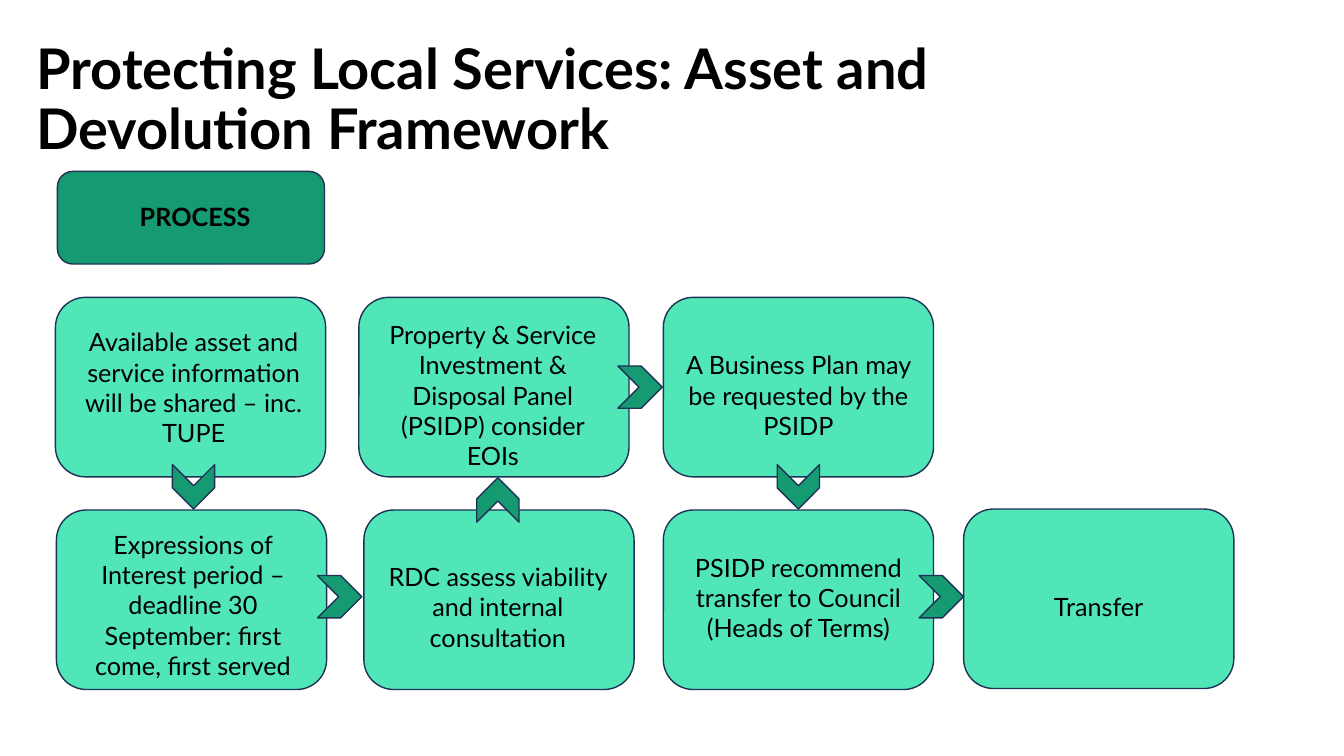
from dataclasses import dataclass

from pptx import Presentation
from pptx import util as u
from pptx.dml.color import RGBColor
from pptx.enum import shapes, text

COLOURS = {"mint": "50E6B8", "green": "169A71", "navy": "1E3256", "black": "000000"}
FONT = "Lato"
BOX_WIDTH, BOX_HEIGHT = 193, 128.2
CHEVRON_WIDTH, CHEVRON_HEIGHT = 31.7, 30.2
LINE_HEIGHT = 22


@dataclass
class Step:
    wording: str
    left: float
    top: float
    text_left: float
    text_top: float
    text_width: float
    lines: int


@dataclass
class Chevron:
    left: float
    top: float
    rotation: int = 0


STEPS = [
    Step("Available asset and service information will be shared – inc. TUPE",
         39.6, 212.4, 56.2, 232.6, 164.2, 4),
    Step("Expressions of Interest period – deadline 30 September: first come, first served",
         40.3, 364.3, 65.5, 377.3, 144.7, 5),
    Step("RDC assess viability and internal consultation",
         259.9, 364.3, 275, 400.3, 161.3, 3),
    Step("Property & Service Investment & Disposal Panel (PSIDP) consider EOIs",
         256.3, 212.4, 271.4, 227.5, 161.3, 5),
    Step("A Business Plan may be requested by the PSIDP",
         473.8, 212.4, 488.2, 249.1, 164.2, 3),
    Step("PSIDP recommend transfer to Council (Heads of Terms)",
         473.8, 364.3, 488.2, 393.8, 164.2, 3),
    Step("Transfer", 688.3, 363.6, 702.7, 421.9, 164.2, 1),
]

CHEVRONS = [
    Chevron(122.4, 332.6, 90),
    Chevron(226.8, 411.1),
    Chevron(339.8, 342, 270),
    Chevron(441.4, 261.4),
    Chevron(554.4, 332.6, 90),
    Chevron(656.6, 411.1),
]


def colour(name: str) -> RGBColor:
    return RGBColor.from_string(COLOURS[name])


def add_span(para, wording: str, size: float, bold: bool) -> None:
    span = para.add_run()
    span.text = wording
    span.font.name = FONT
    span.font.size = u.Pt(size)
    span.font.bold = bold
    span.font.color.rgb = colour("black")


def add_outline(page, kind, left: float, top: float, width: float, height: float,
                fill: str, rotation: int = 0) -> None:
    shape = page.shapes.add_shape(kind, u.Pt(left), u.Pt(top), u.Pt(width), u.Pt(height))
    shape.shadow.inherit = False
    shape.fill.solid()
    shape.fill.fore_color.rgb = colour(fill)
    shape.line.color.rgb = colour("navy")
    shape.line.width = u.Pt(1)
    shape.rotation = rotation


def add_label(page, wording: str, left: float, top: float, width: float, height: float,
              bold: bool = False, inset: bool = False) -> None:
    box = page.shapes.add_textbox(u.Pt(left), u.Pt(top), u.Pt(width), u.Pt(height))
    frame = box.text_frame
    frame.word_wrap = True
    frame.auto_size = text.MSO_AUTO_SIZE.SHAPE_TO_FIT_TEXT
    if not inset:
        frame.margin_left = frame.margin_right = frame.margin_bottom = 0
        frame.margin_top = u.Pt(0.7)
    para = frame.paragraphs[0]
    para.alignment = text.PP_ALIGN.CENTER
    add_span(para, wording, 18, bold)


def add_title(page, wording: str) -> None:
    title = page.shapes.title
    title.left, title.top = u.Pt(18.7), u.Pt(20.2)
    title.width, title.height = u.Pt(851.8), u.Pt(104.4)
    frame = title.text_frame
    frame.word_wrap = True
    frame.auto_size = text.MSO_AUTO_SIZE.NONE
    frame.vertical_anchor = text.MSO_ANCHOR.MIDDLE
    para = frame.paragraphs[0]
    para.alignment = text.PP_ALIGN.LEFT
    para.line_spacing = 0.9
    add_span(para, wording, 40, True)


def main() -> None:
    deck = Presentation()
    deck.slide_width, deck.slide_height = u.Pt(960), u.Pt(540)
    page = deck.slides.add_slide(deck.slide_layouts[5])
    rounded = shapes.MSO_SHAPE.ROUNDED_RECTANGLE

    # Title and process heading
    add_title(page, "Protecting Local Services: Asset and Devolution Framework")
    add_outline(page, rounded, 41, 122.4, 190.8, 66.2, "green")
    add_label(page, "PROCESS", 60.5, 140.4, 157.7, 28.8, bold=True, inset=True)

    # Process steps
    for step in STEPS:
        add_outline(page, rounded, step.left, step.top, BOX_WIDTH, BOX_HEIGHT, "mint")
        add_label(page, step.wording, step.text_left, step.text_top,
                  step.text_width, step.lines * LINE_HEIGHT)

    # Chevrons from step to step
    for chevron in CHEVRONS:
        add_outline(page, shapes.MSO_SHAPE.CHEVRON, chevron.left, chevron.top,
                    CHEVRON_WIDTH, CHEVRON_HEIGHT, "green", chevron.rotation)

    deck.save("out.pptx")


if __name__ == "__main__":
    main()
